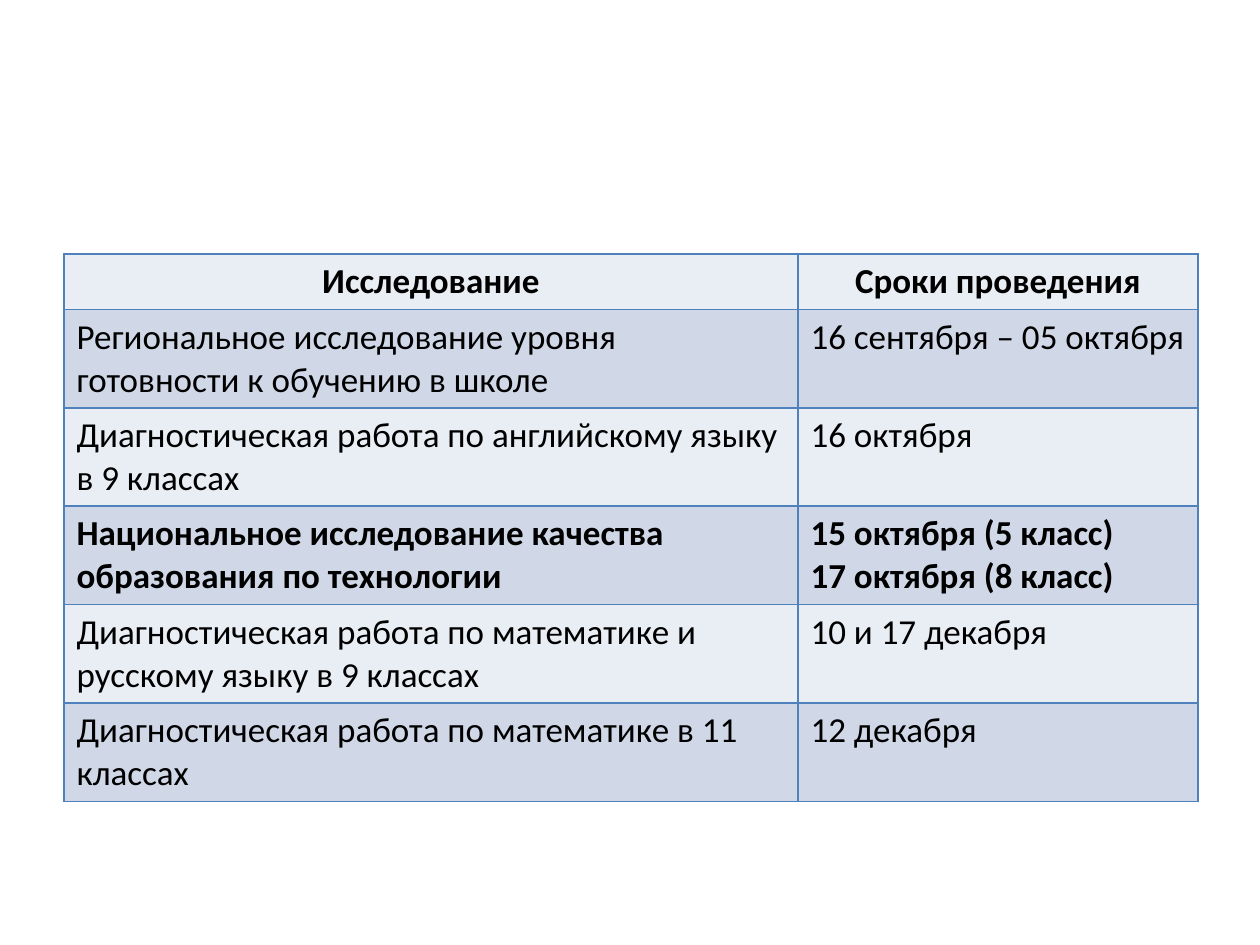
import pptx
import pptx.util
import pptx.dml.color
import pptx.enum.text
import lxml.etree

RGB = pptx.dml.color.RGBColor
ALIGN = pptx.enum.text.PP_ALIGN
PX = 914400 // 126

BLACK = RGB(0x00, 0x00, 0x00)
LIGHT = RGB(0xE9, 0xED, 0xF4)
DARK = RGB(0xD0, 0xD8, 0xE8)
BLUE = RGB(0x4F, 0x81, 0xBD)

HEAD = ("Исследование", "Сроки проведения")
# Study, dates (one per line), bold
PLAN = [
    ("Региональное исследование уровня готовности к обучению в школе",
     ["16 сентября – 05 октября"], False),
    ("Диагностическая работа по английскому языку в 9 классах",
     ["16 октября"], False),
    ("Национальное исследование качества образования по технологии",
     ["15 октября (5 класс)", "17 октября (8 класс)"], True),
    ("Диагностическая работа по математике и русскому языку в 9 классах",
     ["10 и 17 декабря"], False),
    ("Диагностическая работа по математике в 11 классах",
     ["12 декабря"], False),
]


def px(n):
    return pptx.util.Emu(n * PX)


def frame(cell):
    """Draw a thin blue line on all four sides; lines precede the fill."""
    props = cell._tc.get_or_add_tcPr()
    ns = pptx.oxml.ns.qn
    for i, side in enumerate(("a:lnL", "a:lnR", "a:lnT", "a:lnB")):
        line = lxml.etree.Element(ns(side), w=str(pptx.util.Pt(1)))
        fill = lxml.etree.SubElement(line, ns("a:solidFill"))
        lxml.etree.SubElement(fill, ns("a:srgbClr"), val=str(BLUE))
        props.insert(i, line)


def write(cell, lines, fill, bold, align):
    cell.fill.solid()
    cell.fill.fore_color.rgb = fill
    frame(cell)
    text = cell.text_frame
    for i, line in enumerate(lines):
        para = text.add_paragraph() if i else text.paragraphs[0]
        para.alignment = align
        run = para.add_run()
        run.text = line
        font = run.font
        font.name = "Calibri"
        font.size = pptx.util.Pt(20)
        font.bold = bold
        font.color.rgb = BLACK


def schedule(slide, left, top, widths, head, row):
    """Table of studies and their dates."""
    high = head + row * len(PLAN)
    table = slide.shapes.add_table(
        len(PLAN) + 1, len(widths),
        px(left), px(top), px(sum(widths)), px(high)).table
    for col, width in zip(table.columns, widths):
        col.width = px(width)
    for i, line in enumerate(table.rows):
        line.height = px(row if i else head)

    # Header
    for i, name in enumerate(HEAD):
        write(table.cell(0, i), [name], LIGHT, True, ALIGN.CENTER)

    # Body, in alternating bands
    for i, (study, dates, bold) in enumerate(PLAN, 1):
        fill = DARK if i % 2 else LIGHT
        for j, lines in enumerate(([study], dates)):
            write(table.cell(i, j), lines, fill, bold, ALIGN.LEFT)


def main():
    deck = pptx.Presentation()
    deck.slide_width, deck.slide_height = px(1260), px(945)
    slide = deck.slides.add_slide(deck.slide_layouts[6])
    schedule(slide, 64, 254, (734, 400), 55, 98)
    deck.save("out.pptx")


if __name__ == "__main__":
    main()
